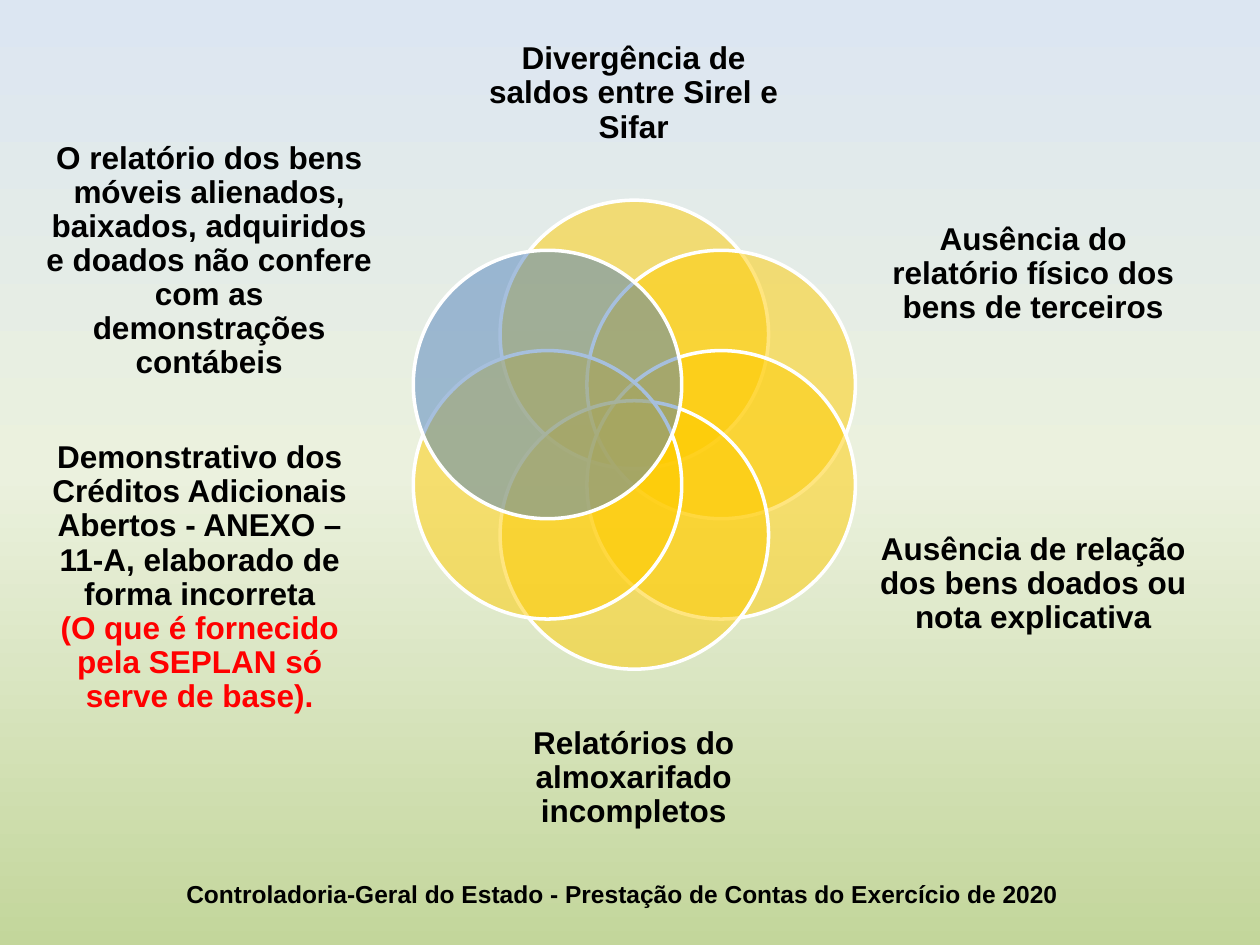
from copy import deepcopy
from math import cos, radians, sin

from lxml.etree import SubElement
from pptx import Presentation
from pptx.dml.color import RGBColor
from pptx.enum.shapes import MSO_SHAPE as Shape
from pptx.enum.text import MSO_ANCHOR as Anchor, PP_ALIGN as Align
from pptx.oxml.ns import qn
from pptx.util import Pt

BACKGROUND = [(0, "DCE6F2"), (0.5, "EBF1DE"), (1, "C3D69B")]
BLACK, RED, WHITE, YELLOW, BLUE = "000000", "FF0000", "FFFFFF", "FFCC00", "4F81BD"
FOOTER = "Controladoria-Geral do Estado - Prestação de Contas do Exercício de 2020"

# left, top, width, height, text (a line break starts the red part)
LABELS = [
    (271.4, 15.1, 181.4, 77, "Divergência de saldos entre Sirel e Sifar"),
    (499.7, 99.4, 181.4, 114.5, "Ausência do relatório físico dos bens de terceiros"),
    (499.7, 270, 181.4, 127.4, "Ausência de relação dos bens doados ou nota explicativa"),
    (266.4, 392.4, 191.5, 104.4, "Relatórios do almoxarifado incompletos"),
    (18.7, 243.4, 190.8, 173.5,
     "Demonstrativo dos Créditos Adicionais Abertos - ANEXO – 11-A, "
     "elaborado de forma incorreta\v(O que é fornecido pela SEPLAN só serve de base)."),
    (23.8, 97.2, 191.5, 104.4,
     "O relatório dos bens móveis alienados, baixados, adquiridos e doados "
     "não confere com as demonstrações contábeis"),
]

# Circles run clockwise from the top
CIRCLE_COLORS = [YELLOW] * 5 + [BLUE]
CENTER_X, CENTER_Y = 362.5, 248.4
RING_RADIUS, DIAMETER = 57.3, 153.4


def rgb(color):
    return RGBColor.from_string(color)


def paint_background(slide):
    fill = slide.background.fill
    fill.gradient()
    fill.gradient_angle = 270
    stops = slide.element.find(".//" + qn("a:gsLst"))
    stops.append(deepcopy(stops[-1]))
    for stop, (position, color) in zip(fill.gradient_stops, BACKGROUND):
        stop.position = position
        stop.color.rgb = rgb(color)


def add_circle(slide, index, color):
    angle = radians(360 / len(CIRCLE_COLORS) * index - 90)
    left = CENTER_X + RING_RADIUS * cos(angle) - DIAMETER / 2
    top = CENTER_Y + RING_RADIUS * sin(angle) - DIAMETER / 2
    circle = slide.shapes.add_shape(
        Shape.OVAL, Pt(left), Pt(top), Pt(DIAMETER), Pt(DIAMETER))
    circle.shadow.inherit = False
    circle.fill.solid()
    circle.fill.fore_color.rgb = rgb(color)
    solid = circle.element.spPr.find(qn("a:solidFill"))
    SubElement(solid[0], qn("a:alpha"), val="50000")
    circle.line.color.rgb = rgb(WHITE)
    circle.line.width = Pt(2)


def add_text(slide, left, top, width, height, text, size):
    box = slide.shapes.add_textbox(Pt(left), Pt(top), Pt(width), Pt(height))
    frame = box.text_frame
    frame.word_wrap = True
    frame.vertical_anchor = Anchor.MIDDLE
    frame.margin_left = frame.margin_right = 0
    frame.margin_top = frame.margin_bottom = 0
    para = frame.paragraphs[0]
    para.text = text
    para.alignment = Align.CENTER
    para.line_spacing = 0.9
    for span, color in zip(para.runs, (BLACK, RED)):
        span.font.name = "Arial"
        span.font.size = Pt(size)
        span.font.bold = True
        span.font.color.rgb = rgb(color)


def main():
    deck = Presentation()
    deck.slide_width, deck.slide_height = Pt(720), Pt(540)
    slide = deck.slides.add_slide(deck.slide_layouts[6])
    paint_background(slide)
    add_text(slide, 39.6, 499.7, 632.2, 24.5, FOOTER, 14)
    for index, color in enumerate(CIRCLE_COLORS):
        add_circle(slide, index, color)
    for label in LABELS:
        add_text(slide, *label, size=18)
    deck.save("out.pptx")


if __name__ == "__main__":
    main()
